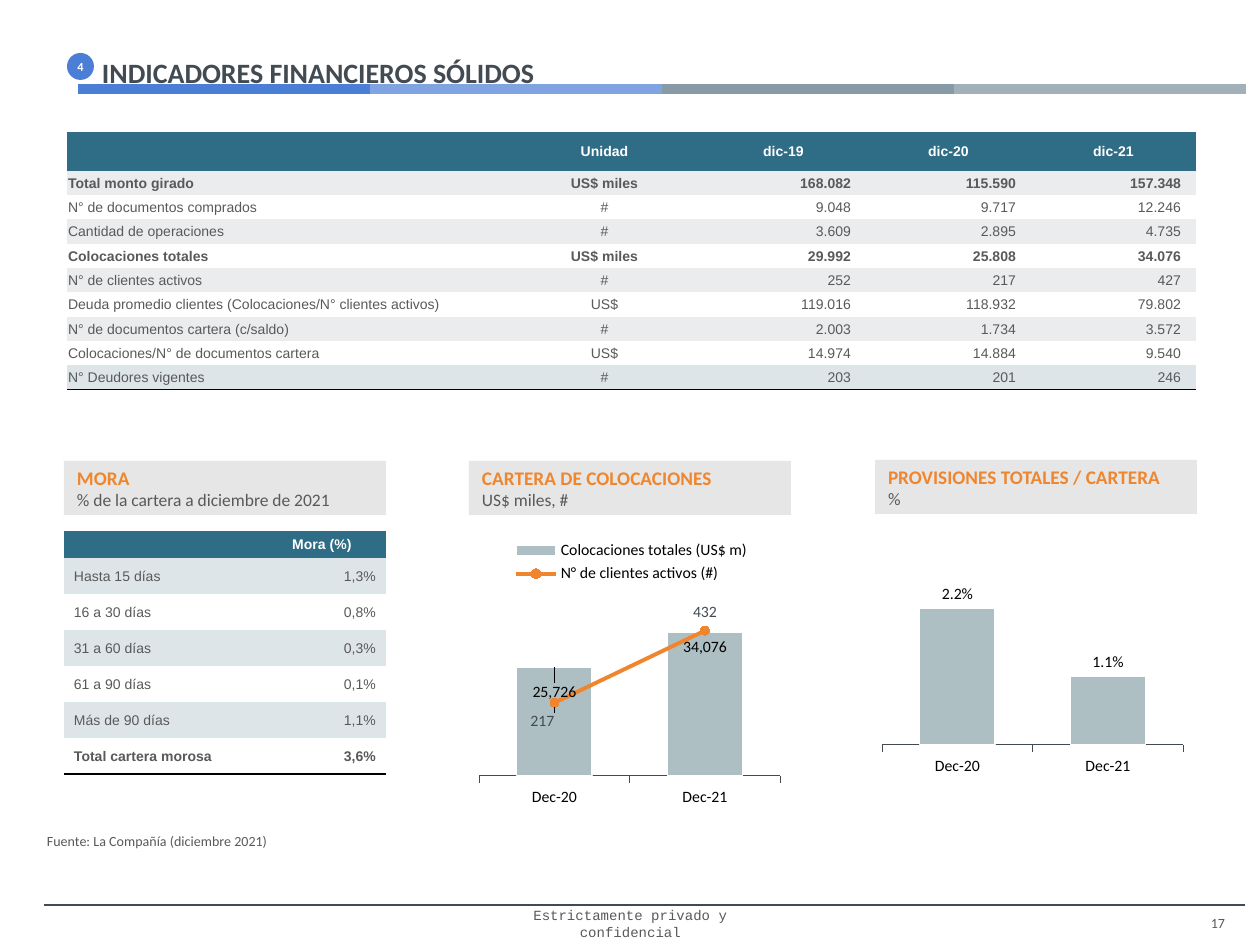
import pptx
import pptx.chart.data
import pptx.dml.color
import pptx.enum.chart
import pptx.enum.shapes
import pptx.enum.text
import pptx.oxml
import pptx.oxml.ns
import pptx.util

SCALE = 914400 / 126  # EMU in one px
NS = pptx.oxml.ns.nsdecls("c", "a")
RGB = pptx.dml.color.RGBColor.from_string
Pt = pptx.util.Pt
ALIGN = pptx.enum.text.PP_ALIGN
MIDDLE = pptx.enum.text.MSO_ANCHOR.MIDDLE
SHAPE = pptx.enum.shapes.MSO_SHAPE
XL = pptx.enum.chart


class Theme:
    ink, gray, white, black = "424A52", "595959", "FFFFFF", "000000"
    blue, teal, orange = "4B7ED5", "2F6C85", "EF862E"
    panel, band, tint, bar = "E6E6E6", "EAECEE", "DEE5E8", "ADBFC3"
    strip = [blue, "7FA4E1", "879AA5", "A2B0B9"]
    title = dict(name="Calibri", size=Pt(16), bold=True)
    head = dict(name="Calibri", size=Pt(11), bold=True)
    sub = dict(name="Calibri", size=Pt(10), bold=False)
    note = dict(name="Calibri", size=Pt(8), bold=False)
    badge = dict(name="Calibri", size=Pt(7), bold=True)
    mono = dict(name="Courier New", size=Pt(8), bold=False)
    cell = dict(name="Arial", size=Pt(8), bold=False)
    strong = dict(name="Arial", size=Pt(8), bold=True)
    chart = dict(name="Calibri", size=Pt(9), bold=False)


def emu(*sizes):
    return [round(size * SCALE) for size in sizes]


def write(host, lines, side=ALIGN.LEFT, pads=(13, 6, 13, 6), anchor=MIDDLE):
    """Fill a shape or a table cell with (text, colour, format) lines."""
    frame = host.text_frame
    frame.word_wrap = True
    form = frame if hasattr(host, "shape_type") else host
    form.vertical_anchor = anchor
    for edge, pad in zip(("left", "top", "right", "bottom"), emu(*pads)):
        setattr(form, "margin_" + edge, pad)
    for row, (text, color, style) in enumerate(lines):
        para = frame.add_paragraph() if row else frame.paragraphs[0]
        para.alignment = side
        if not text:
            para._p.get_or_add_endParaRPr().set("sz", "800")
            continue
        run = para.add_run()
        run.text = text
        run.font.color.rgb = RGB(color)
        for key, val in style.items():
            setattr(run.font, key, val)


deck = pptx.Presentation()
deck.slide_width, deck.slide_height = emu(1260, 945)
slide = deck.slides.add_slide(deck.slide_layouts[5])
shapes = slide.shapes

# Rules, title and small texts
rules = [(44, 1245, 905, Theme.ink, 1)]
rules += [(78 + 292 * i, 370 + 292 * i, 89, color, 6) for i, color in enumerate(Theme.strip)]
for left, right, top, color, width in rules:
    rule = shapes.add_connector(pptx.enum.shapes.MSO_CONNECTOR.STRAIGHT, *emu(left, top, right, top))
    rule.line.color.rgb = RGB(color)
    rule.line.width = Pt(width)
    rule._element.spPr.append(pptx.oxml.parse_xml(f"<a:effectLst {NS}/>"))

title = shapes.title
title.left, title.top, title.width, title.height = emu(89, 18, 1142, 77)
write(title, [("INDICADORES FINANCIEROS SÓLIDOS", Theme.ink, Theme.title)],
      anchor=pptx.enum.text.MSO_ANCHOR.BOTTOM)

notes = [
    ((504, 906, 253, 34), "Estrictamente privado y confidencial", Theme.mono, ALIGN.CENTER, (0, 0, 0, 0)),
    ((1176, 900, 84, 45), "17", Theme.note, ALIGN.CENTER, (13, 6, 13, 6)),
    ((47, 827, 707, 28), "Fuente: La Compañía (diciembre 2021)", Theme.note, ALIGN.LEFT, (0, 6, 13, 6)),
]
for area, text, style, side, pads in notes:
    write(shapes.add_textbox(*emu(*area)), [(text, Theme.gray, style)], side, pads)

# Panel heads and number badge
panels = [
    (64, 461, "MORA", "% de la cartera a diciembre de 2021"),
    (469, 461, "CARTERA DE COLOCACIONES", "US$ miles, #"),
    (875, 460, "PROVISIONES TOTALES / CARTERA", "%"),
]
solids = [(SHAPE.RECTANGLE, (left, top, 322, 54), Theme.panel, ALIGN.LEFT, (13, 6, 13, 6),
           [(head, Theme.orange, Theme.head), (sub, Theme.gray, Theme.sub)])
          for left, top, head, sub in panels]
solids.append((SHAPE.OVAL, (67, 53, 27, 27), Theme.blue, ALIGN.CENTER, (0, 0, 0, 0),
               [("4", Theme.white, Theme.badge)]))
for kind, area, color, side, pads, lines in solids:
    solid = shapes.add_shape(kind, *emu(*area))
    solid.shadow.inherit = False
    solid.fill.solid()
    solid.fill.fore_color.rgb = RGB(color)
    solid.line.fill.background()
    write(solid, lines, side, pads)

# Tables
main = [
    ("", "Unidad", "dic-19", "dic-20", "dic-21"),
    ("Total monto girado", "US$ miles", "168.082", "115.590", "157.348"),
    ("N° de documentos comprados", "#", "9.048", "9.717", "12.246"),
    ("Cantidad de operaciones", "#", "3.609", "2.895", "4.735"),
    ("Colocaciones totales", "US$ miles", "29.992", "25.808", "34.076"),
    ("N° de clientes activos", "#", "252", "217", "427"),
    ("Deuda promedio clientes (Colocaciones/N° clientes activos)", "US$", "119.016", "118.932", "79.802"),
    ("N° de documentos cartera (c/saldo)", "#", "2.003", "1.734", "3.572"),
    ("Colocaciones/N° de documentos cartera", "US$", "14.974", "14.884", "9.540"),
    ("N° Deudores vigentes", "#", "203", "201", "246"),
]
mora = [
    ("", "Mora (%)"),
    ("Hasta 15 días", "1,3%"),
    ("16 a 30 días", "0,8%"),
    ("31 a 60 días", "0,3%"),
    ("61 a 90 días", "0,1%"),
    ("Más de 90 días", "1,1%"),
    ("Total cartera morosa", "3,6%"),
]
L, C, R = ALIGN.LEFT, ALIGN.CENTER, ALIGN.RIGHT
tables = [
    (main, 67, 132, [441, 193, 165, 165, 165], [39] + [24, 24, 25] * 3, [L, C, R, R, R],
     1, 15, {1, 4}, [Theme.band] * 8 + [Theme.tint]),
    (mora, 64, 531, [194, 128], [27] + [36] * 6, [L, R], 10, 10, {6}, [Theme.tint] * 6),
]
for rows, left, top, wide, high, sides, near, far, bold, bands in tables:
    table = shapes.add_table(len(rows), len(wide), *emu(left, top, sum(wide), sum(high))).table
    table.first_row = table.horz_banding = False
    table._tbl.tblPr.find(pptx.oxml.ns.qn("a:tableStyleId")).text = "{2D5ABB26-0587-4C30-8999-92F81FD0307C}"
    for col, size in zip(table.columns, emu(*wide)):
        col.width = size
    for r, (row, size) in enumerate(zip(rows, emu(*high))):
        table.rows[r].height = size
        for c, text in enumerate(row):
            cell = table.cell(r, c)
            fill = Theme.teal if r == 0 else bands[r - 1] if r % 2 else None
            if fill:
                cell.fill.solid()
                cell.fill.fore_color.rgb = RGB(fill)
            else:
                cell.fill.background()
            color = Theme.gray if r else Theme.white
            style = Theme.strong if r == 0 or r in bold else Theme.cell
            pads = (near if r and c == 0 else 1, 1, far if r and sides[c] == R else 1, 0)
            write(cell, [(text, color, style)], sides[c] if r else C, pads)
            if r == len(rows) - 1:
                cell._tc.get_or_add_tcPr().insert(0, pptx.oxml.parse_xml(
                    f'<a:lnB {NS} w="12700"><a:solidFill><a:srgbClr val="{Theme.black}"/></a:solidFill></a:lnB>'))

# Charts
LAYOUT = "<c:layout %s><c:manualLayout>%%s</c:manualLayout></c:layout>" % NS
INNER = ('<c:layoutTarget val="inner"/><c:xMode val="edge"/><c:yMode val="edge"/>'
         '<c:x val="0.056"/><c:y val="{}"/><c:w val="0.878"/><c:h val="{}"/>')
SHIFT = '<c:x val="{}"/><c:y val="{}"/>'
POS = XL.XL_LABEL_POSITION
loans = [("Colocaciones totales (US$ m)", (25726, 34076)), ("N° de clientes activos (#)", (217, 432))]
charts = [
    (460, loans, "#,##0", 0, 40000, POS.INSIDE_END, 0.282, 0.585),
    (863, [("Series 1", (0.022, 0.011))], "0.0%", -0.005, 0.035, POS.OUTSIDE_END, 0.002, 0.865),
]
for left, data, code, low, high, place, top, tall in charts:
    source = pptx.chart.data.CategoryChartData(number_format=code)
    source.categories = ["Dec-20", "Dec-21"]
    for name, vals in data:
        source.add_series(name, vals)
    chart = shapes.add_chart(XL.XL_CHART_TYPE.COLUMN_CLUSTERED, *emu(left, 527, 343, 287), source).chart
    chart.has_title = False
    chart.has_legend = len(data) > 1
    for key, val in Theme.chart.items():
        setattr(chart.font, key, val)
    chart.font.color.rgb = RGB(Theme.black)
    cats, axis = chart.category_axis, chart.value_axis
    cats.format.line.color.rgb = RGB(Theme.ink)
    cats.format.line.width = Pt(0.75)
    formats = dict(minimum_scale=low, maximum_scale=high, has_major_gridlines=False,
                   major_tick_mark=XL.XL_TICK_MARK.NONE, tick_label_position=XL.XL_TICK_LABEL_POSITION.NONE)
    for key, val in formats.items():
        setattr(axis, key, val)
    axis.format.line.fill.background()
    bars = chart.plots[0]
    bars.vary_by_categories = False
    bars.gap_width = 100
    area = bars._element.getparent()
    for old in area.findall(pptx.oxml.ns.qn("c:layout")):
        area.remove(old)
    area.insert(0, pptx.oxml.parse_xml(LAYOUT % INNER.format(top, tall)))
    looks = [(bars.series[0], Theme.black, place, place, 0, 0.035)]
    bars.series[0].format.fill.solid()
    bars.series[0].format.fill.fore_color.rgb = RGB(Theme.bar)
    bars.series[0].format.line.color.rgb = RGB(Theme.white)
    bars.series[0].format.line.width = Pt(0.75)
    if chart.has_legend:
        chart.legend.position = XL.XL_LEGEND_POSITION.TOP
        chart.legend.include_in_layout = False
        curve = bars.series[1]._element
        for flag in curve.xpath("c:invertIfNegative"):
            curve.remove(flag)
        group = pptx.oxml.parse_xml(
            f'<c:lineChart {NS}><c:grouping val="standard"/><c:varyColors val="0"/>'
            '<c:marker val="1"/><c:axId val="501"/><c:axId val="502"/></c:lineChart>')
        group.insert(2, curve)
        bars._element.addnext(group)
        last = axis._element
        for tag, own, other, hide, spot, cross, span in (
                ("catAx", 501, 502, 1, "b", "autoZero", ""),
                ("valAx", 502, 501, 0, "r", "max", '<c:max val="500"/><c:min val="0"/>')):
            extra = pptx.oxml.parse_xml(
                f'<c:{tag} {NS}><c:axId val="{own}"/><c:scaling><c:orientation val="minMax"/>{span}</c:scaling>'
                f'<c:delete val="{hide}"/><c:axPos val="{spot}"/><c:majorTickMark val="none"/>'
                '<c:minorTickMark val="none"/><c:tickLblPos val="none"/>'
                '<c:spPr><a:ln><a:noFill/></a:ln></c:spPr>'
                f'<c:crossAx val="{other}"/><c:crosses val="{cross}"/></c:{tag}>')
            last.addnext(extra)
            last = extra
        line = chart.plots[1].series[0]
        line.smooth = False
        line.format.line.color.rgb = RGB(Theme.orange)
        line.format.line.width = Pt(2.25)
        line.marker.style = XL.XL_MARKER_STYLE.CIRCLE
        line.marker.size = 5
        line.marker.format.fill.solid()
        line.marker.format.fill.fore_color.rgb = RGB(Theme.orange)
        line.marker.format.line.color.rgb = RGB(Theme.orange)
        looks.append((line, Theme.ink, POS.ABOVE, POS.BELOW, -0.035, 0))
    for series, color, spot, first, right, down in looks:
        labels = series.data_labels
        tags = [(labels, spot)]
        if chart.has_legend:
            tags.append((series.points[0].data_label, first))
        for tag, where in tags:
            tag.position = where
            for key, val in Theme.chart.items():
                setattr(tag.font, key, val)
            tag.font.color.rgb = RGB(color)
        labels.show_value = True
        labels.number_format, labels.number_format_is_linked = code, False
        for label in series._element.xpath("c:dLbls/c:dLbl"):
            label.insert(1, pptx.oxml.parse_xml(LAYOUT % SHIFT.format(right, down)))

deck.save("out.pptx")
